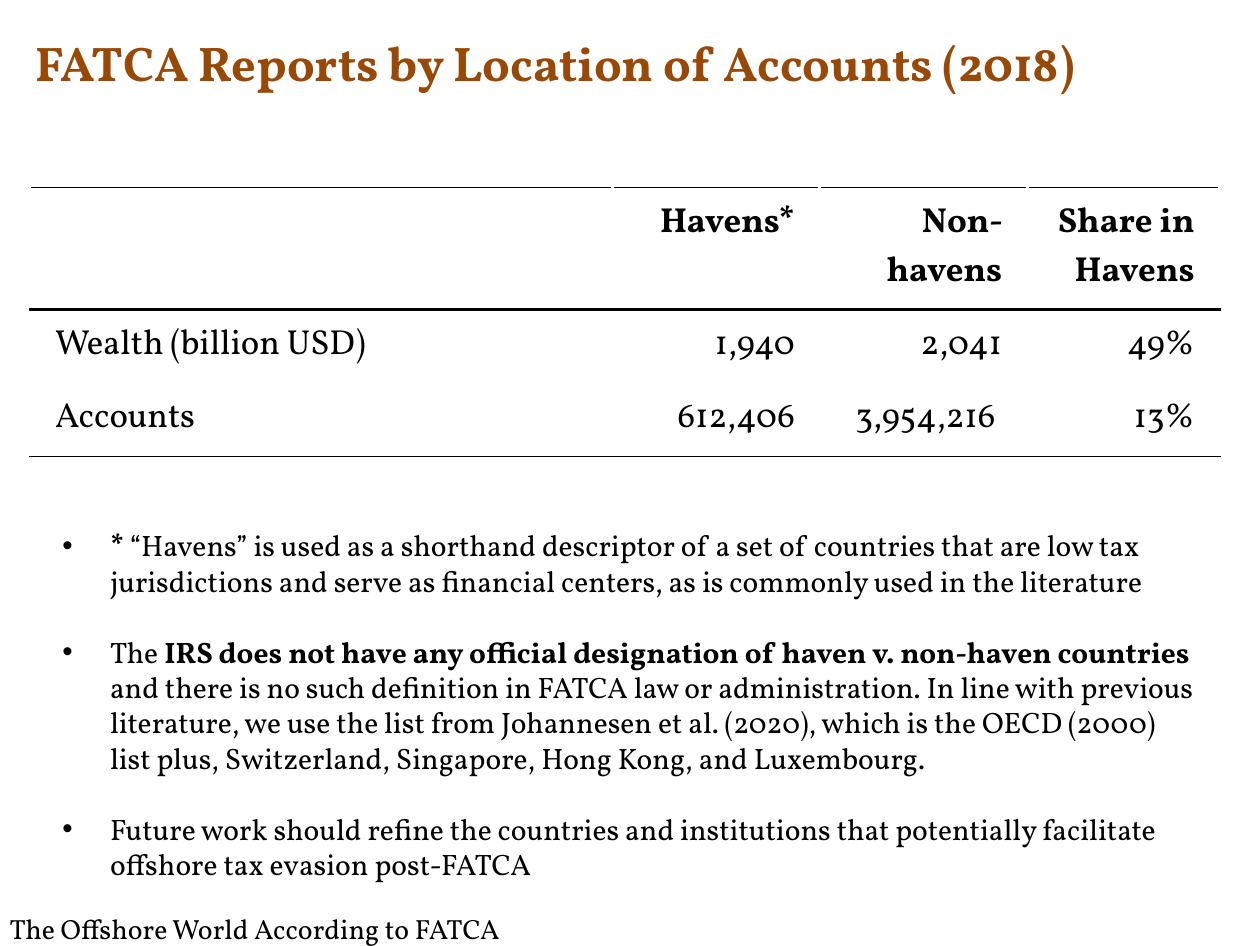
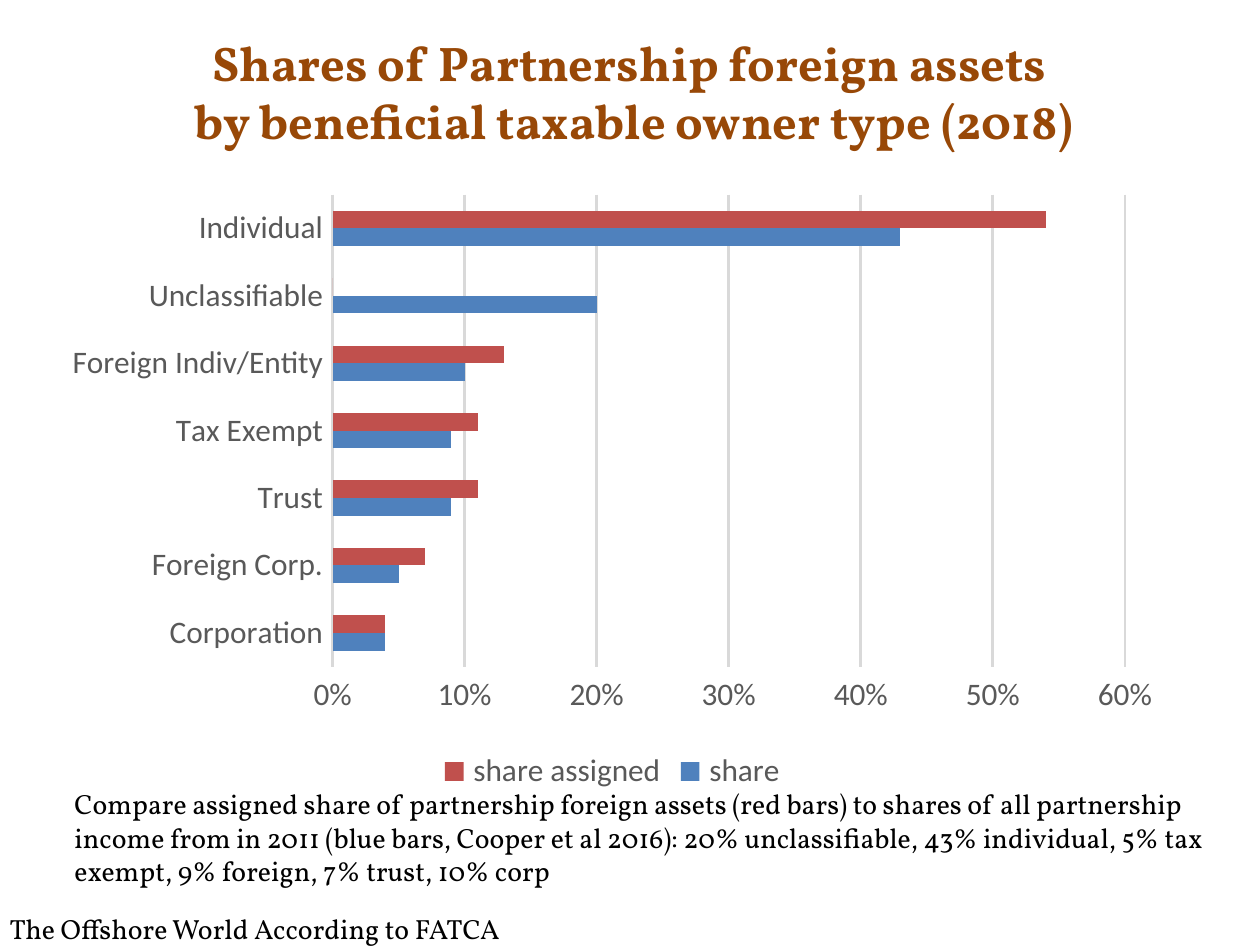
from lxml import etree
from pptx import Presentation
from pptx import util as u
from pptx.chart.data import CategoryChartData
from pptx.dml.color import RGBColor
from pptx.enum import chart as charts, text
from pptx.oxml.ns import qn

BROWN = RGBColor(0x98, 0x48, 0x07)
BLACK = RGBColor(0x00, 0x00, 0x00)
WHITE = RGBColor(0xFF, 0xFF, 0xFF)
GRAY = RGBColor(0x59, 0x59, 0x59)
LIGHT_GRAY = RGBColor(0xD9, 0xD9, 0xD9)
BLUE = RGBColor(0x4F, 0x81, 0xBD)
RED = RGBColor(0xC0, 0x50, 0x4D)
FONT = "Vollkorn"
CHART_FONT = "Calibri"


def set_font(font, size, color, name=FONT, bold=False):
    font.size, font.name, font.bold = u.Pt(size), name, bold
    font.color.rgb = color


def place(shape, left, top, width, height):
    shape.left, shape.top = u.Inches(left), u.Inches(top)
    shape.width, shape.height = u.Inches(width), u.Inches(height)


deck = Presentation()
deck.slide_width, deck.slide_height = u.Pt(363), u.Pt(272.5)
TITLE_AND_CONTENT, TITLE_ONLY = deck.slide_layouts[1], deck.slide_layouts[5]

# Titles
titles = [
    (TITLE_AND_CONTENT, "FATCA Reports by Location of Accounts (2018)",
     text.PP_ALIGN.LEFT, 0.24),
    (TITLE_ONLY, "Shares of Partnership foreign assets \vby beneficial taxable owner type (2018)",
     text.PP_ALIGN.CENTER, 0.47),
]
for layout, wording, alignment, height in titles:
    slide = deck.slides.add_slide(layout)
    title = slide.shapes.title
    place(title, 0.14, 0.13, 4.8, height)
    frame = title.text_frame
    frame.margin_left = frame.margin_right = frame.margin_top = frame.margin_bottom = 0
    frame.vertical_anchor = text.MSO_ANCHOR.TOP
    frame.auto_size = text.MSO_AUTO_SIZE.NONE
    frame.text = wording
    para = frame.paragraphs[0]
    para.alignment = alignment
    for span in para.runs:
        set_font(span.font, 14, BROWN, bold=True)

reports_slide, partnership_slide = deck.slides

# Footer, moved to the slide master so that every slide shows it
footer = reports_slide.shapes.add_textbox(
    u.Inches(-0.06), u.Inches(3.6), u.Inches(2.29), u.Inches(0.24))
footer.text_frame.word_wrap = True
footer.text_frame.text = "The Offshore World According to FATCA"
set_font(footer.text_frame.paragraphs[0].runs[0].font, 8, BLACK)
footer._element.nvSpPr.cNvPr.set("id", "20")
deck.slide_master.shapes._spTree.append(footer._element)

# Table of reports
rows = [
    ["", "Havens*", "Non-havens", "Share in Havens"],
    ["Wealth (billion USD)", "1,940", "2,041", "49%"],
    ["Accounts", "612,406", "3,954,216 ", "13%"],
]
column_widths = [2.33, 0.83, 0.83, 0.77]
row_heights = [0.31, 0.27, 0.22]
rules = [(BLACK, 0.25), (BLACK, 1), (WHITE, 1), (BLACK, 0.25)]
side_rule = (WHITE, 1)

table = reports_slide.shapes.add_table(
    len(rows), len(column_widths), u.Inches(0.12), u.Inches(0.75),
    u.Inches(4.77), u.Inches(0.97)).table
table.first_row = table.horz_banding = False
for column, width in zip(table.columns, column_widths):
    column.width = u.Inches(width)
for r, (values, height) in enumerate(zip(rows, row_heights)):
    table.rows[r].height = u.Inches(height)
    for c, value in enumerate(values):
        cell = table.cell(r, c)
        cell.text = value
        para = cell.text_frame.paragraphs[0]
        para.alignment = text.PP_ALIGN.RIGHT if c else text.PP_ALIGN.LEFT
        set_font(para.font, 10, BLACK, bold=r == 0)
        for span in para.runs:
            set_font(span.font, 10, BLACK, bold=r == 0)
        properties = cell._tc.get_or_add_tcPr()
        borders = {"a:lnL": side_rule, "a:lnR": side_rule, "a:lnT": rules[r], "a:lnB": rules[r + 1]}
        for tag, (color, weight) in borders.items():
            line = etree.SubElement(properties, qn(tag), w=str(int(u.Pt(weight))))
            fill = etree.SubElement(line, qn("a:solidFill"))
            etree.SubElement(fill, qn("a:srgbClr"), val=str(color))
        cell.fill.solid()
        cell.fill.fore_color.rgb = WHITE

# Notes on havens: each bullet is a list of (wording, bold)
bullets = [
    [("*", True),
     (" “Havens” is used as a shorthand descriptor of a set of countries that are low tax "
      "jurisdictions and serve as financial centers, as is commonly used in the literature", False)],
    [("The ", False),
     ("IRS does not have any official designation of haven v. non-haven countries ", True),
     ("and there is no such definition in FATCA law or administration. In line with previous "
      "literature, we use the list from Johannesen et al. (2020), which is the OECD (2000) list "
      "plus, Switzerland, Singapore, Hong Kong, and Luxembourg.", False)],
    [("Future work should refine the countries and institutions that potentially facilitate "
      "offshore tax evasion post-FATCA", False)],
]
body = reports_slide.placeholders[1]
place(body, 0.15, 2.06, 4.73, 1.67)
frame = body.text_frame
frame.auto_size = text.MSO_AUTO_SIZE.NONE
for i, spans in enumerate(bullets):
    para = frame.add_paragraph() if i else frame.paragraphs[0]
    para.space_before, para.space_after = u.Pt(0), u.Pt(10.2)
    properties = para._p.get_or_add_pPr()
    properties.set("marL", str(int(u.Inches(0.19))))
    properties.set("indent", str(int(u.Inches(-0.19))))
    etree.SubElement(properties, qn("a:buFont"), typeface="Arial")
    etree.SubElement(properties, qn("a:buChar"), char="•")
    for wording, bold in spans:
        span = para.add_run()
        span.text = wording
        set_font(span.font, 8.5, BLACK, bold=bold)

# Comparison below the chart
comparison = partnership_slide.shapes.add_textbox(
    u.Inches(0.2), u.Inches(3.1), u.Inches(4.73), u.Inches(0.5))
comparison.text_frame.word_wrap = True
comparison.text_frame.text = (
    "Compare assigned share of partnership foreign assets (red bars) to shares of all partnership "
    "income from in 2011 (blue bars, Cooper et al 2016): 20% unclassifiable, 43% individual, "
    "5% tax exempt, 9% foreign, 7% trust, 10% corp")
set_font(comparison.text_frame.paragraphs[0].runs[0].font, 8, BLACK)

# Chart of owner types
data = CategoryChartData(number_format="0%")
data.categories = ["Corporation", "Foreign Corp.", "Trust", "Tax Exempt",
                   "Foreign Indiv/Entity", "Unclassifiable", "Individual"]
data.add_series("share", [0.04, 0.05, 0.09, 0.09, 0.1, 0.2, 0.43])
data.add_series("share assigned", [0.04, 0.07, 0.11, 0.11, 0.13, 0, 0.54])
chart = partnership_slide.shapes.add_chart(
    charts.XL_CHART_TYPE.BAR_CLUSTERED, u.Inches(0.2), u.Inches(0.73),
    u.Inches(4.5), u.Inches(2.47), data).chart
set_font(chart.font, 10, BLACK, CHART_FONT)
chart.has_title = False
chart.has_legend = True
chart.legend.position = charts.XL_LEGEND_POSITION.BOTTOM
chart.legend.include_in_layout = False
set_font(chart.legend.font, 9, GRAY, CHART_FONT)

plot = chart.plots[0]
plot.gap_width, plot.overlap = 182, 0
plot.vary_by_categories = False
for series, color in zip(plot.series, (BLUE, RED)):
    series.format.fill.solid()
    series.format.fill.fore_color.rgb = color

owner_axis, share_axis = chart.category_axis, chart.value_axis
for axis in (owner_axis, share_axis):
    axis.major_tick_mark = axis.minor_tick_mark = charts.XL_TICK_MARK.NONE
    set_font(axis.tick_labels.font, 9, GRAY, CHART_FONT)
share_axis.minimum_scale, share_axis.maximum_scale, share_axis.major_unit = 0, 0.6, 0.1
share_axis.tick_labels.number_format = "0%"
share_axis.tick_labels.number_format_is_linked = False
share_axis.has_major_gridlines = True
share_axis.format.line.fill.background()
for line in (owner_axis.format.line, share_axis.major_gridlines.format.line):
    line.color.rgb = LIGHT_GRAY
    line.width = u.Pt(0.75)

deck.save("out.pptx")
